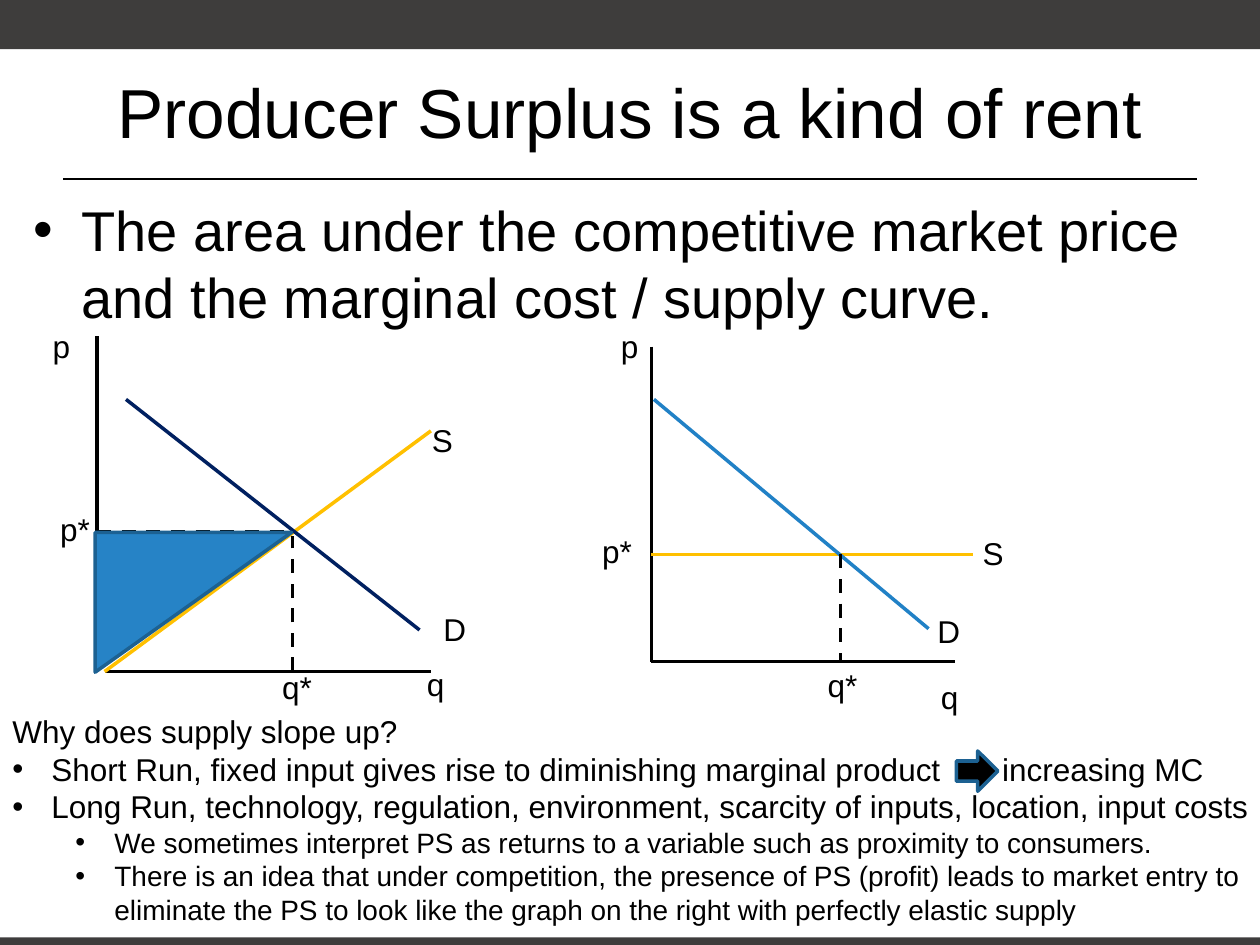
from lxml.etree import SubElement
from pptx import Presentation
from pptx.dml.color import RGBColor
from pptx.enum.dml import MSO_LINE
from pptx.enum.shapes import MSO_CONNECTOR, MSO_SHAPE
from pptx.enum.text import MSO_ANCHOR, PP_ALIGN
from pptx.oxml.ns import qn
from pptx.util import Inches, Pt

BLACK = "000000"
CHARCOAL = "3E3D3C"
GOLD = "FFC000"
NAVY = "002060"
BLUE = "2181C6"
SURPLUS_BLUE = "2683C6"
OUTLINE_BLUE = "1C6192"


def color(hex_string):
    return RGBColor.from_string(hex_string)


class SlideBuilder:
    font_name = "Arial"
    label_size = 18
    line_width = 2

    def __init__(self, slide):
        self.slide = slide

    def shape(self, kind, left, top, width, height, fill, outline=None, rotation=0):
        shape = self.slide.shapes.add_shape(
            kind, Inches(left), Inches(top), Inches(width), Inches(height))
        shape.shadow.inherit = False
        shape.rotation = rotation
        shape.fill.solid()
        shape.fill.fore_color.rgb = color(fill)
        if outline:
            shape.line.color.rgb = color(outline)
            shape.line.width = Pt(self.line_width)
        else:
            shape.line.fill.background()

    def line(self, start, end, line_color=BLACK, width=line_width, dashed=False):
        connector = self.slide.shapes.add_connector(
            MSO_CONNECTOR.STRAIGHT, *map(Inches, start + end))
        connector.line.color.rgb = color(line_color)
        connector.line.width = Pt(width)
        if dashed:
            connector.line.dash_style = MSO_LINE.DASH
        SubElement(connector._element.spPr, qn("a:effectLst"))

    def text_frame(self, left, top, width, height, wrap=True):
        box = self.slide.shapes.add_textbox(
            Inches(left), Inches(top), Inches(width), Inches(height))
        box.text_frame.word_wrap = wrap
        return box.text_frame

    def format_runs(self, paragraph, size):
        for run in paragraph.runs:
            run.font.name = self.font_name
            run.font.size = Pt(size)
            run.font.color.rgb = color(BLACK)

    def label(self, text, left, top, width):
        text_frame = self.text_frame(left, top, width, 0.4, wrap=False)
        text_frame.text = text
        self.format_runs(text_frame.paragraphs[0], self.label_size)

    def title(self, text, left, top, width, height):
        text_frame = self.text_frame(left, top, width, height)
        text_frame.vertical_anchor = MSO_ANCHOR.MIDDLE
        text_frame.text = text
        text_frame.paragraphs[0].alignment = PP_ALIGN.CENTER
        self.format_runs(text_frame.paragraphs[0], 39.6)

    def bullet(self, paragraph, margin, hanging):
        """Give the paragraph a round bullet with a hanging indent in inches."""
        properties = paragraph._p.get_or_add_pPr()
        properties.set("marL", str(Inches(margin)))
        properties.set("indent", str(-Inches(hanging)))
        SubElement(properties, qn("a:buFont")).set("typeface", self.font_name)
        SubElement(properties, qn("a:buChar")).set("char", "•")

    def gap(self, paragraph, points):
        """Add one space widened by the given number of points."""
        run = paragraph.add_run()
        run.text = " "
        run.font._element.set("spc", str(points * 100))


def add_frame(builder):
    builder.shape(MSO_SHAPE.RECTANGLE, 0, 0, 10, 0.39, CHARCOAL)
    builder.shape(MSO_SHAPE.RECTANGLE, 0, 7.44, 10, 0.06, CHARCOAL)
    builder.line((0.5, 1.42), (9.5, 1.42), width=1.25)
    builder.title("Producer Surplus is a kind of rent", 0.5, 0.25, 9, 1.25)

    text_frame = builder.text_frame(0.17, 1.5, 9.83, 1.2)
    text_frame.text = ("The area under the competitive market price "
                       "and the marginal cost / supply curve.")
    definition = text_frame.paragraphs[0]
    definition.space_before = Pt(6)
    builder.bullet(definition, 0.38, 0.38)
    builder.format_runs(definition, 32)


def add_rising_supply_graph(builder):
    builder.line((0.77, 5.33), (0.77, 2.67))
    builder.line((0.83, 5.33), (3.42, 5.33))
    builder.line((0.83, 5.33), (3.42, 3.42), GOLD)
    builder.line((1, 3.17), (3.33, 5), NAVY)
    builder.line((0.77, 4.22), (2.33, 4.22), dashed=True)
    builder.line((2.32, 5.33), (2.32, 4.25), dashed=True)
    builder.shape(MSO_SHAPE.RIGHT_TRIANGLE, 0.98, 4, 1.11, 1.56,
                  SURPLUS_BLUE, OUTLINE_BLUE, rotation=90)
    for label in (("p", 0.32, 2.55, 0.34), ("D", 3.42, 4.79, 0.38),
                  ("S", 3.33, 3.29, 0.37), ("p*", 0.38, 4, 0.44),
                  ("q*", 2.14, 5.25, 0.44), ("q", 3.29, 5.23, 0.34)):
        builder.label(*label)


def add_flat_supply_graph(builder):
    builder.line((5.17, 2.75), (5.17, 5.25))
    builder.line((5.17, 5.25), (7.58, 5.25))
    builder.line((5.17, 4.4), (7.72, 4.4), GOLD)
    builder.line((5.19, 3.17), (7.37, 4.99), BLUE)
    builder.line((6.67, 4.4), (6.67, 5.25), dashed=True)
    for label in (("p", 4.83, 2.55, 0.34), ("D", 7.34, 4.81, 0.38),
                  ("S", 7.7, 4.19, 0.37), ("p*", 4.68, 4.17, 0.44),
                  ("q*", 6.47, 5.24, 0.44), ("q", 7.37, 5.33, 0.34)):
        builder.label(*label)


def add_explanation(builder):
    text_frame = builder.text_frame(0, 5.6, 10.25, 1.82)
    text_frame.text = "\n".join((
        "Why does supply slope up?",
        "Short Run, fixed input gives rise to diminishing marginal product",
        "Long Run, technology, regulation, environment, scarcity of inputs, "
        "location, input costs",
        "We sometimes interpret PS as returns to a variable such as "
        "proximity to consumers.",
        "There is an idea that under competition, the presence of PS (profit) "
        "leads to market entry to eliminate the PS to look like the graph on "
        "the right with perfectly elastic supply",
    ))
    question, short_run, long_run, *details = text_frame.paragraphs
    builder.gap(short_run, 30)
    short_run.add_run().text = "increasing MC"
    for paragraph in (short_run, long_run):
        builder.bullet(paragraph, 0.31, 0.31)
    for paragraph in (question, short_run, long_run):
        builder.format_runs(paragraph, 18)
    for paragraph in details:
        paragraph.level = 1
        builder.bullet(paragraph, 0.81, 0.31)
        builder.format_runs(paragraph, 16)
    builder.shape(MSO_SHAPE.RIGHT_ARROW, 7.59, 5.96, 0.33, 0.32, BLACK, OUTLINE_BLUE)


def main():
    presentation = Presentation()
    presentation.slide_width = Inches(10)
    presentation.slide_height = Inches(7.5)
    blank_layout = presentation.slide_layouts[6]
    builder = SlideBuilder(presentation.slides.add_slide(blank_layout))
    add_frame(builder)
    add_rising_supply_graph(builder)
    add_flat_supply_graph(builder)
    add_explanation(builder)
    presentation.save("out.pptx")


if __name__ == "__main__":
    main()
